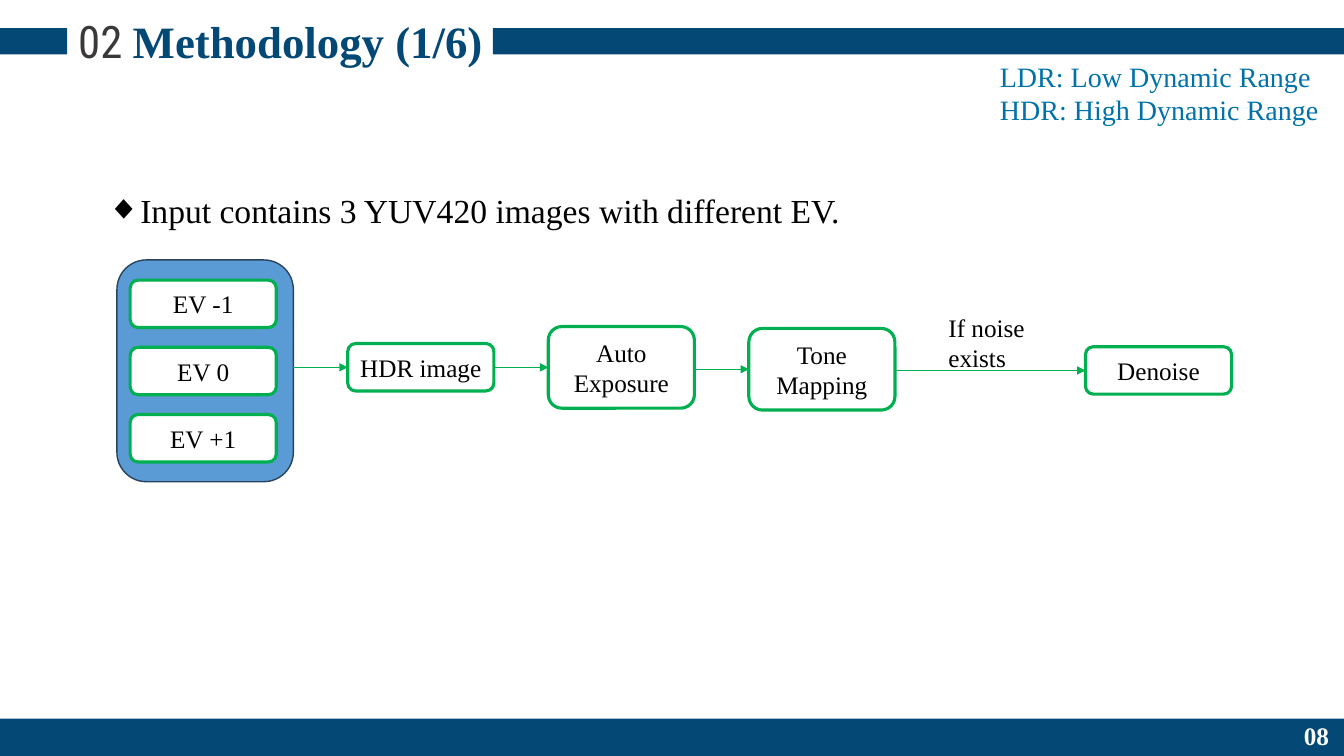
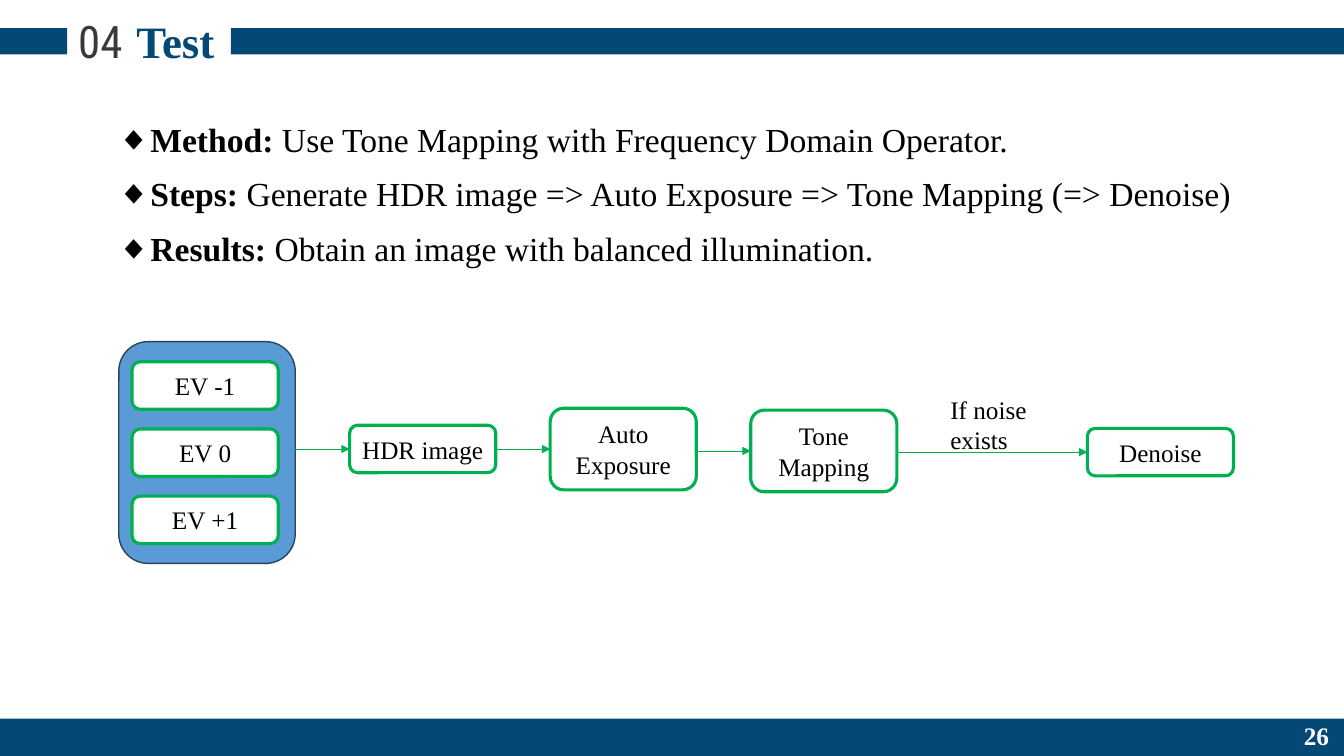
"""Builds two slides about an HDR imaging pipeline."""
from lxml import etree
from pptx import Presentation
from pptx import util as u
from pptx.dml.color import RGBColor
from pptx.enum import shapes, text
from pptx.oxml import ns

COLORS = {
    "navy": "044875", "number": "3B3838", "note": "0072A9", "black": "000000",
    "white": "FFFFFF", "green": "00B050", "stack": "5B9BD5", "stack_edge": "28445D",
}
SERIF, CONDENSED = "Times New Roman", "Roboto Condensed"
COLUMNS, ROWS = 64, 36
WIDTH, HEIGHT = u.Inches(13.33), u.Inches(7.5)
NODE_WIDTH, NODE_HEIGHT, TALL_HEIGHT = 6.96, 2.26, 3.89
STACK_WIDTH, STACK_HEIGHT, STACK_PITCH = 8.4, 10.56, 3.2
GAP, LONG_GAP = 2.59, 9.07
STEPS = [
    (GAP, 3.98, NODE_HEIGHT, ["HDR image"]),
    (GAP, 3.17, TALL_HEIGHT, ["Auto Exposure"]),
    (GAP, 3.26, TALL_HEIGHT, ["Tone", "Mapping"]),
    (LONG_GAP, 4.13, NODE_HEIGHT, ["Denoise"]),
]


def color(name):
    """Return the named colour."""
    return RGBColor.from_string(COLORS[name])


def grid(left, top, width, height):
    """Turn grid columns and rows into slide lengths."""
    return (int(left * WIDTH / COLUMNS), int(top * HEIGHT / ROWS),
            int(width * WIDTH / COLUMNS), int(height * HEIGHT / ROWS))


def style(para, size, tint, bold=None, face=SERIF):
    """Set the font of a whole paragraph."""
    para.font.name, para.font.size = face, u.Pt(size)
    para.font.color.rgb, para.font.bold = color(tint), bold


def write(frame, lines, size, tint, align=text.PP_ALIGN.LEFT,
          anchor=text.MSO_ANCHOR.TOP, bold=None, face=SERIF):
    """Fill a text frame with one paragraph per line."""
    frame.word_wrap, frame.auto_size = True, text.MSO_AUTO_SIZE.NONE
    frame.vertical_anchor = anchor
    frame.text = "\n".join(lines)
    for para in frame.paragraphs:
        para.alignment = align
        style(para, size, tint, bold, face)


def add_label(page, area, lines, size, tint, **options):
    """Add a text box."""
    box = page.shapes.add_textbox(*grid(*area))
    write(box.text_frame, lines, size, tint, **options)


def add_box(page, kind, area, fill, edge=None, weight=1):
    """Add a filled shape with an optional outline."""
    box = page.shapes.add_shape(kind, *grid(*area))
    box.shadow.inherit = False
    box.fill.solid()
    box.fill.fore_color.rgb = color(fill)
    if edge:
        box.line.color.rgb, box.line.width = color(edge), u.Pt(weight)
    else:
        box.line.fill.background()
    return box


def add_node(page, area, lines):
    """Add a green-edged step of the flow."""
    node = add_box(page, shapes.MSO_SHAPE.ROUNDED_RECTANGLE, area, "white", "green", 2.25)
    node.text_frame.margin_left = node.text_frame.margin_right = u.Inches(0.05)
    write(node.text_frame, lines, 18, "black", align=text.PP_ALIGN.CENTER,
          anchor=text.MSO_ANCHOR.MIDDLE)


def add_arrow(page, start, end, level):
    """Add a level arrow between two columns."""
    left, top, width, _ = grid(start, level, end - start, 0)
    arrow = page.shapes.add_connector(shapes.MSO_CONNECTOR.STRAIGHT, left, top, left + width, top)
    arrow.line.color.rgb, arrow.line.width = color("green"), u.Pt(0.5)
    edge = arrow.line._get_or_add_ln()
    etree.SubElement(edge, ns.qn("a:tailEnd"), type="triangle")
    etree.SubElement(arrow._element.spPr, ns.qn("a:effectLst"))


def add_frame(page, number, title, title_width, band_start, page_number):
    """Add the title, its bands and the footer."""
    for area in [(0, 1.34, 3.2, 1.25), (band_start, 1.34, COLUMNS - band_start, 1.25),
                 (0, 34.22, COLUMNS, 1.78)]:
        add_box(page, shapes.MSO_SHAPE.RECTANGLE, area, "navy")
    heading = page.shapes.title
    heading.left, heading.top, heading.width, heading.height = grid(4.03, 0.43, title_width, 3.07)
    center = text.PP_ALIGN.CENTER
    write(heading.text_frame, [title], 32, "navy", align=center, bold=True)
    add_label(page, (2.88, 0.43, 3.79, 3.07), [number], 32, "number", align=center, face=CONDENSED)
    add_label(page, (61.34, 34.08, 2.69, 1.92), [page_number], 18, "white", align=center,
              anchor=text.MSO_ANCHOR.MIDDLE, bold=True)


def add_bullets(page, area, items, spacing=1.0, after=12, margin=0.05):
    """Fill the body placeholder with diamond bullets led by bold words."""
    body = page.placeholders[1]
    body.left, body.top, body.width, body.height = grid(*area)
    frame = body.text_frame
    frame.word_wrap, frame.auto_size = True, text.MSO_AUTO_SIZE.NONE
    frame.margin_top = frame.margin_bottom = u.Inches(margin)
    for index, (lead, rest) in enumerate(items):
        para = frame.add_paragraph() if index else frame.paragraphs[0]
        para.level, para.alignment = 1, text.PP_ALIGN.JUSTIFY
        para.line_spacing, para.space_before, para.space_after = spacing, u.Pt(0), u.Pt(after)
        marks = para._p.get_or_add_pPr()
        marks.set("marL", str(u.Inches(0.81)))
        marks.set("indent", str(u.Inches(-0.31)))
        tint = etree.SubElement(marks, ns.qn("a:buClr"))
        etree.SubElement(tint, ns.qn("a:srgbClr"), val=COLORS["black"])
        etree.SubElement(marks, ns.qn("a:buFont"), typeface=SERIF)
        etree.SubElement(marks, ns.qn("a:buChar"), char="◆")
        style(para, 24, "black")
        if lead:
            span = para.add_run()
            span.text, span.font.bold = lead + " ", True
        para.add_run().text = rest


def add_flow(page, left, top):
    """Draw the pipeline from the exposure stack to denoising."""
    add_box(page, shapes.MSO_SHAPE.ROUNDED_RECTANGLE, (left, top, STACK_WIDTH, STACK_HEIGHT),
            "stack", "stack_edge")
    for row, exposure in enumerate(["EV -1", "EV 0", "EV +1"]):
        add_node(page, (left + 0.63, top + 0.96 + row * STACK_PITCH, NODE_WIDTH, NODE_HEIGHT),
                 [exposure])
    edge = left + STACK_WIDTH
    for gap, offset, height, lines in STEPS:
        add_arrow(page, edge, edge + gap, top + offset + height / 2)
        add_node(page, (edge + gap, top + offset, NODE_WIDTH, height), lines)
        edge += gap + NODE_WIDTH
    add_label(page, (left + 39.12, top + 2.26, 4.8, 3.41), ["If noise exists"], 18, "black")


def add_methodology(page):
    """Build the methodology slide."""
    add_frame(page, "02", "Methodology (1/6)", 21.26, 23.47, "08")
    add_bullets(page, (2.21, 8.78, 59.14, 2.4),
                [("", "Input contains 3 YUV420 images with different EV.")], after=24)
    add_label(page, (47.14, 2.59, 16.85, 3.7),
              ["LDR: Low Dynamic Range", "HDR: High Dynamic Range"], 20, "note")
    add_flow(page, 5.57, 12.38)


def add_test(page):
    """Build the test slide."""
    add_frame(page, "04", "Test", 8.64, 11, "26")
    add_bullets(page, (2.69, 5.33, 58.13, 26.26), [
        ("Method:", "Use Tone Mapping with Frequency Domain Operator."),
        ("Steps:", "Generate HDR image => Auto Exposure => Tone Mapping (=> Denoise)"),
        ("Results:", "Obtain an image with balanced illumination."),
    ], spacing=0.94, margin=0.1)
    add_flow(page, 5.66, 16.27)


def main():
    """Build and save the deck."""
    deck = Presentation()
    deck.slide_width, deck.slide_height = WIDTH, HEIGHT
    for build in (add_methodology, add_test):
        build(deck.slides.add_slide(deck.slide_layouts[1]))
    deck.save("out.pptx")


if __name__ == "__main__":
    main()
